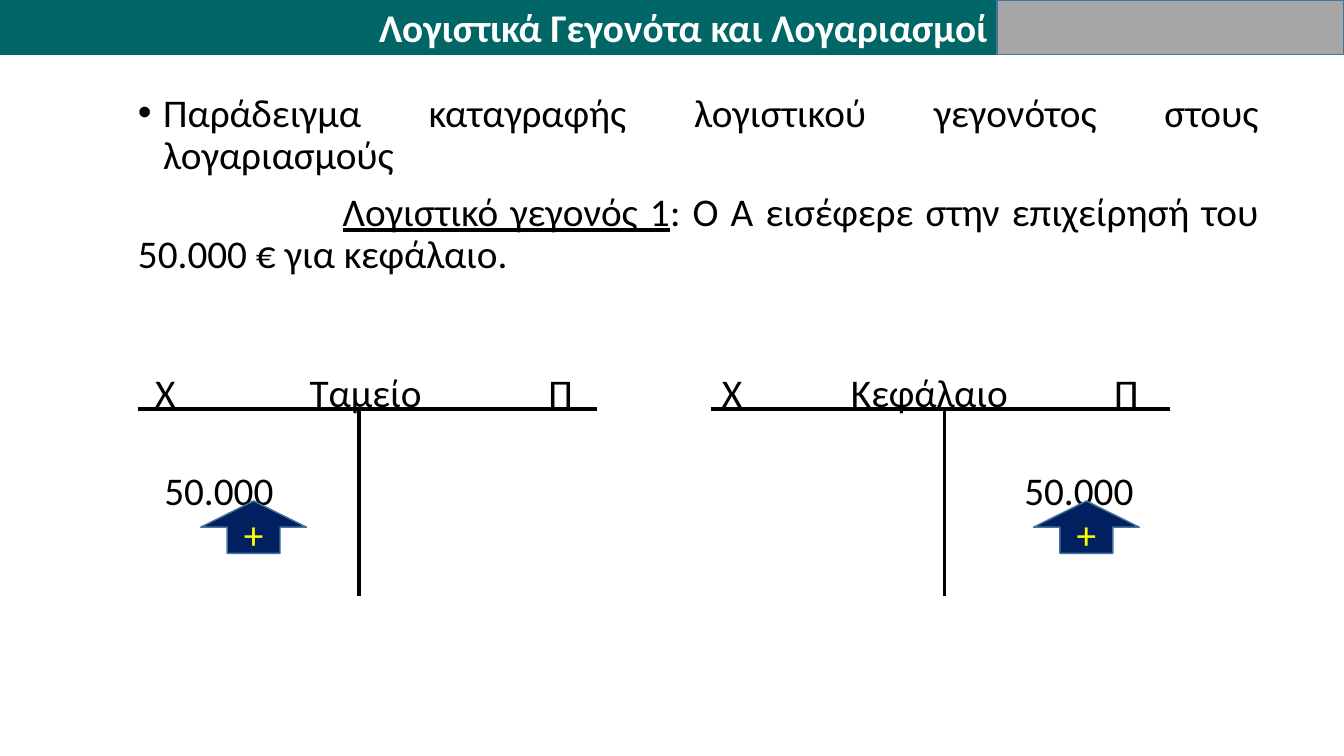
from lxml.etree import SubElement
from pptx import Presentation
from pptx.dml.color import RGBColor
from pptx.enum.shapes import MSO_CONNECTOR, MSO_SHAPE
from pptx.enum.text import MSO_ANCHOR, PP_ALIGN
from pptx.oxml.ns import qn
from pptx.util import Inches, Pt

THEME = {
    "font": "Calibri", "size": Pt(28),
    "text": "000000", "title": "FFFFFF", "plus": "FFFF00",
    "band": "006666", "block": "A6A6A6", "arrow": "002060", "edge": "43739E",
}

deck = Presentation()
deck.slide_width, deck.slide_height = Inches(13.33), Inches(7.5)
page = deck.slides.add_slide(deck.slide_layouts[6])


def add_span(para, text, color="text", **extras):
    span = para.add_run()
    span.text = text
    span.font.color.rgb = RGBColor.from_string(THEME[color])
    formats = {"name": THEME["font"], "size": THEME["size"], **extras}
    for name, value in formats.items():
        setattr(span.font, name, value)


def add_block(kind, left, top, width, height, fill, edge):
    block = page.shapes.add_shape(kind, Inches(left), Inches(top), Inches(width), Inches(height))
    block.shadow.inherit = False
    block.fill.solid()
    block.fill.fore_color.rgb = RGBColor.from_string(THEME[fill])
    block.line.color.rgb = RGBColor.from_string(THEME[edge])
    block.line.width = Pt(1)
    block.text_frame.vertical_anchor = MSO_ANCHOR.MIDDLE
    return block


# Example text
box = page.shapes.add_textbox(Inches(1.27), Inches(0.88), Inches(11.31), Inches(2))
box.text_frame.word_wrap = True
bullet = box.text_frame.paragraphs[0]
event = box.text_frame.add_paragraph()
event.space_before = Pt(10)
for para, margin, indent in ((bullet, 0.25, -0.25), (event, 0, 2.03)):
    para.alignment = PP_ALIGN.JUSTIFY
    para.line_spacing = 0.9
    properties = para._p.get_or_add_pPr()
    properties.set("marL", str(Inches(margin)))
    properties.set("indent", str(Inches(indent)))
SubElement(bullet._p.pPr, qn("a:buFont"), typeface="Arial")
SubElement(bullet._p.pPr, qn("a:buChar"), char="•")
add_span(bullet, "Παράδειγμα καταγραφής λογιστικού γεγονότος στους λογαριασμούς")
add_span(event, "Λογιστικό γεγονός 1", underline=True)
add_span(event, ": Ο Α εισέφερε στην επιχείρησή του 50.000 € για κεφάλαιο.")

# Account headings and amounts
HEADING_TOP, AMOUNT_TOP = 3.71, 4.68
labels = (
    ("Χ", 1.54, HEADING_TOP), ("Ταμείο", 3.07, HEADING_TOP), ("Π", 5.44, HEADING_TOP),
    ("Χ", 7.16, HEADING_TOP), ("Κεφάλαιο", 8.44, HEADING_TOP), ("Π", 11.05, HEADING_TOP),
    ("50.000", 1.63, AMOUNT_TOP), ("50.000", 10.16, AMOUNT_TOP),
)
for text, left, top in labels:
    box = page.shapes.add_textbox(Inches(left), Inches(top), Inches(1.8), Inches(0.43))
    for side in ("left", "top", "right", "bottom"):
        setattr(box.text_frame, f"margin_{side}", 0)
    para = box.text_frame.paragraphs[0]
    para.line_spacing = 0.9
    add_span(para, text)

# Title band
band = add_block(MSO_SHAPE.RECTANGLE, 0, 0, 9.89, 0.54, "band", "band")
title = band.text_frame.paragraphs[0]
title.alignment = PP_ALIGN.RIGHT
add_span(title, "Λογιστικά Γεγονότα και Λογαριασμοί", "title", bold=True)
add_block(MSO_SHAPE.RECTANGLE, 9.89, 0, 3.44, 0.54, "block", "edge")

# T-accounts: a bar and a stem each
BAR_Y, STEM_END, BAR_WIDTH = 4.06, 5.91, 4.55
for left, stem in ((1.37, 3.56), (7.05, 9.37)):
    for ends in ((left, BAR_Y, left + BAR_WIDTH, BAR_Y), (stem, BAR_Y, stem, STEM_END)):
        rule = page.shapes.add_connector(MSO_CONNECTOR.STRAIGHT, *map(Inches, ends))
        rule.line.color.rgb = RGBColor.from_string(THEME["text"])
        rule.line.width = Pt(2.5)
        SubElement(rule._element.spPr, qn("a:effectLst"))

# Increase arrows
for left in (1.99, 10.25):
    arrow = add_block(MSO_SHAPE.UP_ARROW, left, 4.97, 1.05, 0.52, "arrow", "edge")
    para = arrow.text_frame.paragraphs[0]
    para.alignment = PP_ALIGN.CENTER
    add_span(para, "+", "plus")

deck.save("out.pptx")
